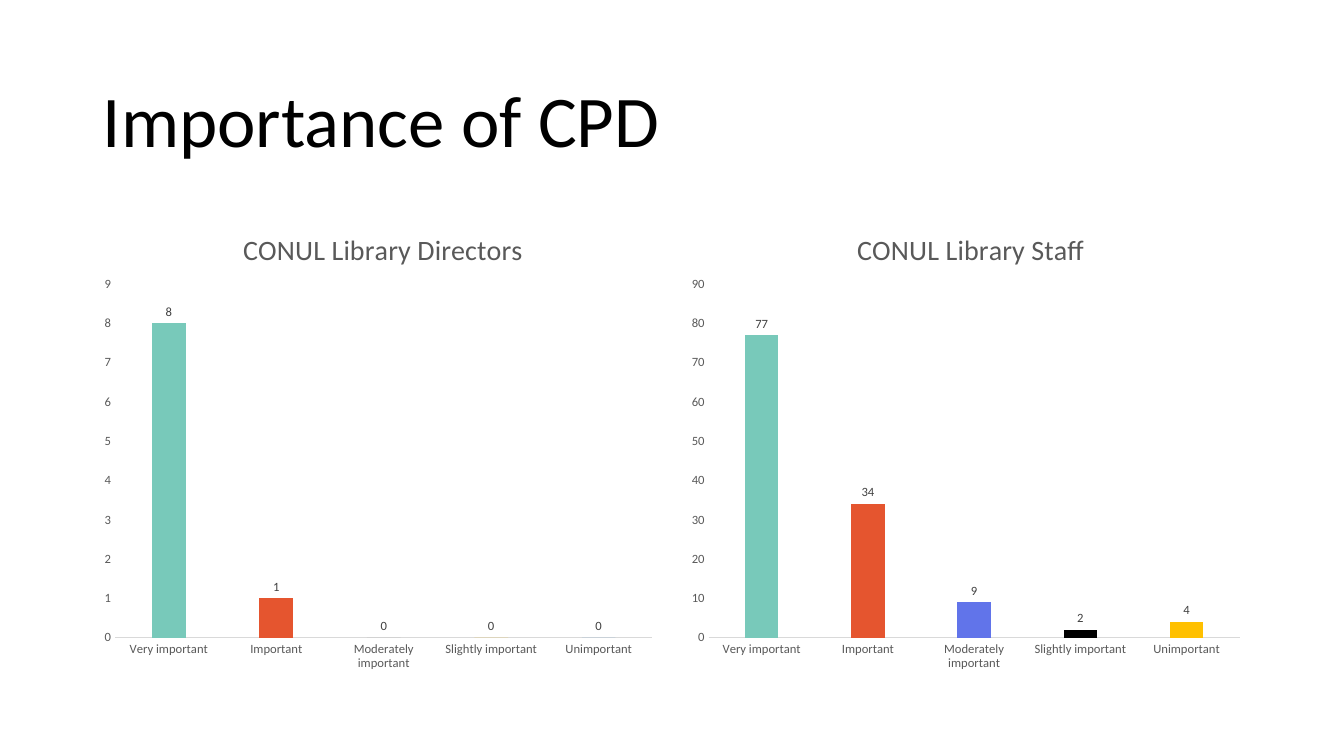
from lxml.etree import SubElement as Sub
from pptx import Presentation
from pptx.chart.data import CategoryChartData as Data
from pptx.dml.color import RGBColor
from pptx.enum.chart import XL_CHART_TYPE as Kind, XL_LABEL_POSITION as Spot, XL_TICK_MARK as Tick
from pptx.enum.text import MSO_ANCHOR as Anchor, MSO_AUTO_SIZE as Fit, PP_ALIGN as Align
from pptx.oxml import parse_xml
from pptx.oxml.ns import nsdecls, qn
from pptx.util import Inches, Pt

FONT = "Calibri"
BLACK = RGBColor(0x00, 0x00, 0x00)
DARK = RGBColor(0x40, 0x40, 0x40)
GREY = RGBColor(0x59, 0x59, 0x59)
PALE = RGBColor(0xD9, 0xD9, 0xD9)
MID = RGBColor(0xA5, 0xA5, 0xA5)
TEAL = RGBColor(0x78, 0xC9, 0xBA)
RED = RGBColor(0xE5, 0x55, 0x2F)
BLUE = RGBColor(0x61, 0x74, 0xEA)
SKY = RGBColor(0x5B, 0x9B, 0xD5)
GOLD = RGBColor(0xFF, 0xC0, 0x00)

CATS = ["Very important", "Important", "Moderately important", "Slightly important", "Unimportant"]
WIDE, HIGH = 5.67, 4.76


def style(font, size, color):
    """Set the face, size and colour of a font."""
    font.name, font.size, font.bold = FONT, Pt(size), False
    font.color.rgb = color


def put(frame, text, size=20, color=GREY, align=Align.CENTER, space=None):
    """Write one formatted paragraph into a text frame."""
    para = frame.paragraphs[0]
    para.alignment = align
    if space:
        para.line_spacing = space
    run = para.add_run()
    run.text = text
    style(run.font, size, color)


def place(part, index, inner=False, **box):
    """Give a chart part a fixed place, in fractions of the chart."""
    for old in part.findall(qn("c:layout")):
        part.remove(old)
    layout = parse_xml(f"<c:layout {nsdecls('c')}><c:manualLayout/></c:layout>")
    if inner:
        Sub(layout[0], qn("c:layoutTarget"), val="inner")
    for key in "xy":
        Sub(layout[0], qn(f"c:{key}Mode"), val="edge")
    for key, num in box.items():
        Sub(layout[0], qn(f"c:{key}"), val=f"{num:.3f}")
    part.insert(index, layout)


def head(slide, left, top, wide, high):
    """Place the slide title in its box."""
    title = slide.shapes.title
    title.left, title.top = Inches(left), Inches(top)
    title.width, title.height = Inches(wide), Inches(high)
    frame = title.text_frame
    frame.word_wrap, frame.auto_size = True, Fit.NONE
    frame.vertical_anchor = Anchor.MIDDLE
    put(frame, "Importance of CPD", size=52, color=BLACK, align=Align.LEFT, space=0.9)


def axes(chart, step):
    """Format both axes, with values running to nine steps."""
    for axis in (chart.category_axis, chart.value_axis):
        axis.has_major_gridlines = False
        axis.major_tick_mark = axis.minor_tick_mark = Tick.NONE
        style(axis.tick_labels.font, 9, GREY)
    line = chart.category_axis.format.line
    line.color.rgb, line.width = PALE, Pt(0.75)
    value = chart.value_axis
    value.format.line.fill.background()
    value.minimum_scale, value.maximum_scale, value.major_unit = 0, 9 * step, step


def bars(slide, left, top, name, vals, colors, step, inset, start):
    """Draw a column chart with its own colour for each answer."""
    data = Data()
    data.categories = CATS
    data.add_series("Series 1", vals)
    chart = slide.shapes.add_chart(Kind.COLUMN_CLUSTERED, Inches(left), Inches(top),
                                   Inches(WIDE), Inches(HIGH), data).chart
    style(chart.font, 10, BLACK)
    chart.has_legend = False
    put(chart.chart_title.text_frame, name)
    place(chart.chart_title.element, 1, x=start / WIDE, y=0.23 / HIGH)
    place(chart.element.find(".//" + qn("c:plotArea")), 0, inner=True, x=inset / WIDE,
          y=0.82 / HIGH, w=(5.55 - inset) / WIDE, h=3.51 / HIGH)
    axes(chart, step)
    plot = chart.plots[0]
    plot.gap_width, plot.overlap, plot.vary_by_categories = 219, -27, False
    for i, color in enumerate(colors):
        fill = plot.series[0].points[i].format.fill
        fill.solid()
        fill.fore_color.rgb = color
    plot.has_data_labels = True
    labels = plot.data_labels
    labels.show_value, labels.position = True, Spot.OUTSIDE_END
    style(labels.font, 9, DARK)


def main():
    """Build and save the slide."""
    deck = Presentation()
    deck.slide_width, deck.slide_height = Inches(13.33), Inches(7.5)
    slide = deck.slides.add_slide(deck.slide_layouts[5])
    head(slide, 0.92, 0.61, 11.5, 1.24)
    bars(slide, 0.92, 2, "CONUL Library Directors", [8, 1, 0, 0, 0],
         [TEAL, RED, MID, GOLD, SKY], step=1, inset=0.22, start=1.44)
    bars(slide, 6.75, 2, "CONUL Library Staff", [77, 34, 9, 2, 4],
         [TEAL, RED, BLUE, BLACK, GOLD], step=10, inset=0.28, start=1.7)
    deck.save("out.pptx")


if __name__ == "__main__":
    main()
